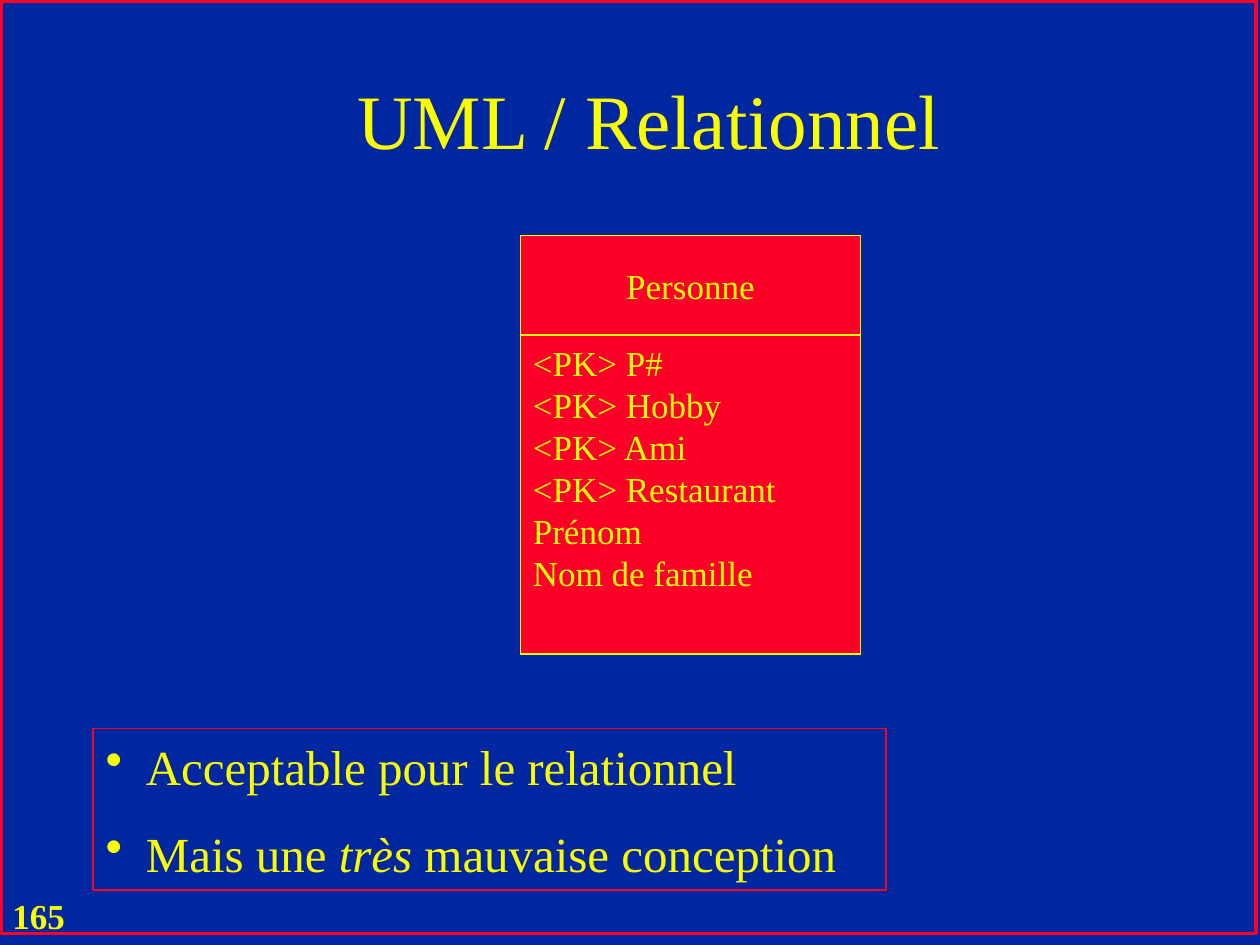
from lxml import etree
from pptx import Presentation
from pptx import util as u
from pptx.dml.color import RGBColor
from pptx.enum import shapes, text
from pptx.oxml.ns import qn

Pt = u.Pt
BLUE = RGBColor(0x00, 0x27, 0x9F)
RED = RGBColor(0xFC, 0x01, 0x28)
YELLOW = RGBColor(0xFA, 0xFD, 0x00)
LEFT, CENTER = text.PP_ALIGN.LEFT, text.PP_ALIGN.CENTER
TOP, MIDDLE = text.MSO_ANCHOR.TOP, text.MSO_ANCHOR.MIDDLE

prs = Presentation()
prs.slide_width, prs.slide_height = Pt(720), Pt(540)
slide = prs.slides.add_slide(prs.slide_layouts[6])
slide.background.fill.solid()
slide.background.fill.fore_color.rgb = BLUE


def add_box(left, top, width, height, line, weight, fill=None):
    box = slide.shapes.add_shape(
        shapes.MSO_SHAPE.RECTANGLE, Pt(left), Pt(top), Pt(width), Pt(height))
    box.shadow.inherit = False
    if fill is None:
        box.fill.background()
    else:
        box.fill.solid()
        box.fill.fore_color.rgb = fill
    box.line.color.rgb = line
    box.line.width = Pt(weight)
    return box


def write(shape, lines, size, align=LEFT, anchor=TOP, wrap=False):
    frame = shape.text_frame
    frame.word_wrap = wrap
    frame.vertical_anchor = anchor
    frame.text = "\n".join(lines)
    for line in frame.paragraphs:
        line.alignment = align
        line.font.name = "Times New Roman"
        line.font.size = Pt(size)
        line.font.color.rgb = YELLOW
    return frame.paragraphs


page_number = slide.shapes.add_textbox(Pt(0), Pt(507.6), Pt(49.7), Pt(31))
write(page_number, ["165"], 20)[0].font.bold = True

add_box(0.7, 0.7, 717.1, 532.8, RED, 2)

title = slide.shapes.add_textbox(Pt(64.8), Pt(23), Pt(612), Pt(90))
write(title, ["UML / Relationnel"], 44, CENTER, MIDDLE, True)

remarks = add_box(53.3, 416.2, 452.9, 92.2, RED, 1)
acceptable, mauvaise = write(
    remarks, ["Acceptable pour le relationnel", "Mais une "], 28, LEFT, MIDDLE, True)
tres = mauvaise.add_run()
tres.text = "très"
tres.font.italic = True
mauvaise.add_run().text = " mauvaise conception"
mauvaise.space_before = Pt(16)
for remark in (acceptable, mauvaise):
    properties = remark._p.get_or_add_pPr()
    properties.set("marL", str(Pt(23)))
    properties.set("indent", str(-Pt(23)))
    bullet = etree.Element(qn("a:buChar"), char="•")
    properties.insert_element_before(bullet, "a:tabLst", "a:defRPr", "a:extLst")

class_name = add_box(297.4, 134.6, 194.4, 56.9, YELLOW, 1, RED)
write(class_name, ["Personne"], 20, CENTER, MIDDLE)

attributes = add_box(297.4, 191.5, 194.4, 182.2, YELLOW, 1, RED)
keys = [f"<PK> {key}" for key in ("P#", "Hobby", "Ami", "Restaurant")]
write(attributes, keys + ["Prénom", "Nom de famille"], 20)

prs.save("out.pptx")
